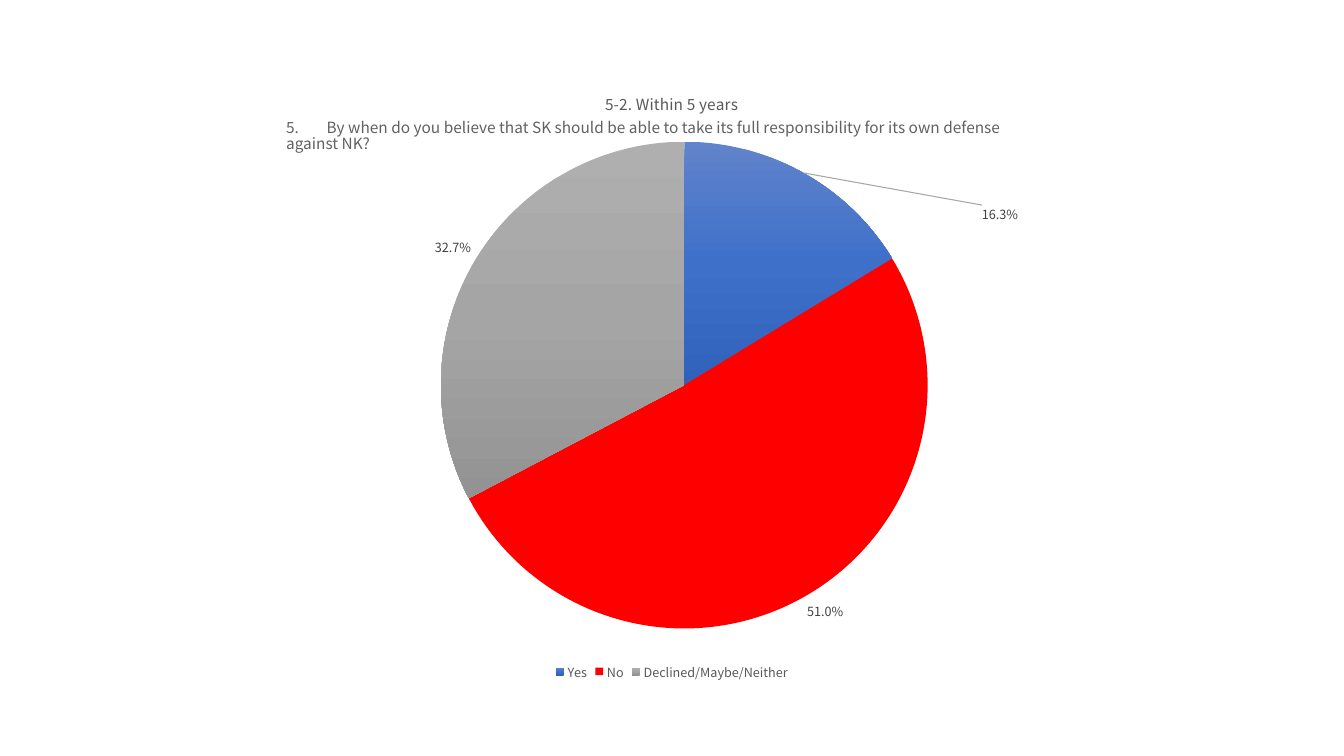
from copy import deepcopy
from dataclasses import dataclass

from pptx import Presentation
from pptx.chart.chart import Chart
from pptx.chart.data import CategoryChartData
from pptx.chart.point import Point
from pptx.dml.color import RGBColor
from pptx.enum.chart import XL_CHART_TYPE, XL_LABEL_POSITION, XL_LEGEND_POSITION
from pptx.oxml import parse_xml
from pptx.oxml.ns import nsdecls
from pptx.slide import Slide
from pptx.text.text import Font
from pptx.util import Pt

FACE = "Noto Sans CJK KR"
COLORS = {"title": "595959", "label": "404040", "body": "616161", "line": "A6A6A6"}
TITLE = "5-2. Within 5 years"
QUESTION = ("5.\tBy when do you believe that SK should be able to take its full "
            "responsibility for its own defense against NK?")
PERCENT = "0.0%"


@dataclass
class Slice:
    name: str
    value: float
    fills: tuple[str, ...]


SLICES = [
    Slice("Yes", 0.163, ("6183CB", "3E70CA", "3062BB")),
    Slice("No", 0.51, ("FF0000",)),
    Slice("Declined/Maybe/Neither", 0.327, ("AFAFAF", "A5A5A5", "939393")),
]


def style(font: Font, size: float, color: str) -> None:
    font.name, font.size, font.bold = FACE, Pt(size), False
    font.color.rgb = RGBColor.from_string(COLORS[color])


def layout(**parts: object):
    """Build a manual chart layout from its parts, in schema order."""
    body = "".join(f'<c:{key} val="{val}"/>' for key, val in parts.items())
    return parse_xml(f'<c:layout {nsdecls("c")}><c:manualLayout>{body}'
                     "</c:manualLayout></c:layout>")


def paint(point: Point, fills: tuple[str, ...]) -> None:
    """Fill a slice with one colour, or with three from top to bottom."""
    point.format.line.fill.background()
    fill = point.format.fill
    if len(fills) == 1:
        fill.solid()
        fill.fore_color.rgb = RGBColor.from_string(fills[0])
        return
    fill.gradient()
    fill.gradient_angle = 270
    first = fill.gradient_stops[0]._gs
    first.addnext(deepcopy(first))
    for i, (stop, color) in enumerate(zip(fill.gradient_stops, fills)):
        stop.position = i / 2
        stop.color.rgb = RGBColor.from_string(color)


def label(chart: Chart) -> None:
    """Show the shares, with the first one pulled out on a leader line."""
    series = chart.plots[0].series[0]
    labels = series.data_labels
    labels.show_value = True
    labels.number_format, labels.number_format_is_linked = PERCENT, False
    labels.position = XL_LABEL_POSITION.OUTSIDE_END
    style(labels.font, 9, "label")

    moved = series.points[0].data_label
    style(moved.font, 9, "label")
    moved.position = XL_LABEL_POSITION.OUTSIDE_END
    index = series._element.xpath("c:dLbls/c:dLbl/c:idx")[0]
    index.addnext(layout(x=0.19, y=0.09))
    index.getnext().addnext(parse_xml(
        f'<c:numFmt {nsdecls("c")} formatCode="{PERCENT}" sourceLinked="0"/>'))

    box = labels._element
    for old in box.xpath("c:showLeaderLines"):
        box.remove(old)
    box.append(parse_xml(f'<c:showLeaderLines {nsdecls("c")} val="1"/>'))
    box.append(parse_xml(
        f'<c:leaderLines {nsdecls("c", "a")}><c:spPr><a:ln w="9525"><a:solidFill>'
        f'<a:srgbClr val="{COLORS["line"]}"/></a:solidFill></a:ln></c:spPr>'
        "</c:leaderLines>"))


def add_pie(slide: Slide) -> None:
    data = CategoryChartData(number_format=PERCENT)
    data.categories = [part.name for part in SLICES]
    data.add_series(TITLE, [part.value for part in SLICES])
    chart = slide.shapes.add_chart(
        XL_CHART_TYPE.PIE, Pt(149.76), Pt(50.4), Pt(660.24), Pt(438.48), data).chart
    chart.font.name, chart.font.size = FACE, Pt(10)

    chart.has_title = True
    frame = chart.chart_title.text_frame
    frame.text = TITLE
    style(frame.paragraphs[0].runs[0].font, 11, "title")
    chart.chart_title.include_in_layout = False

    chart.has_legend = True
    chart.legend.position = XL_LEGEND_POSITION.BOTTOM
    chart.legend.include_in_layout = False
    style(chart.legend.font, 9, "title")

    plot = chart.plots[0]
    plot.vary_by_categories = True
    for i, part in enumerate(SLICES):
        paint(plot.series[0].points[i], part.fills)
    label(chart)

    area = chart._chartSpace.xpath("c:chart/c:plotArea")[0]
    for old in area.xpath("c:layout"):
        area.remove(old)
    area.insert(0, layout(layoutTarget="inner", xMode="edge", yMode="edge",
                          x=0.25, y=0.116, w=0.527, h=0.793))


def add_text(slide: Slide, text: str, *, left: float, top: float, width: float,
             height: float, size: float, color: str, tab: float) -> None:
    frame = slide.shapes.add_textbox(
        Pt(left), Pt(top), Pt(width), Pt(height)).text_frame
    frame.word_wrap = True
    para = frame.paragraphs[0]
    para.line_spacing, para.space_after = 0.9, Pt(6)
    run = para.add_run()
    run.text = text
    style(run.font, size, color)
    para._p.get_or_add_pPr().append(parse_xml(
        f'<a:tabLst {nsdecls("a")}><a:tab pos="{Pt(tab)}" algn="l"/></a:tabLst>'))


def main() -> None:
    deck = Presentation()
    deck.slide_width, deck.slide_height = Pt(960), Pt(540)
    slide = deck.slides.add_slide(deck.slide_layouts[6])
    add_pie(slide)
    add_text(slide, QUESTION, left=197.28, top=82.08, width=545.76, height=137.52,
             size=11, color="body", tab=29)
    deck.save("out.pptx")


if __name__ == "__main__":
    main()
